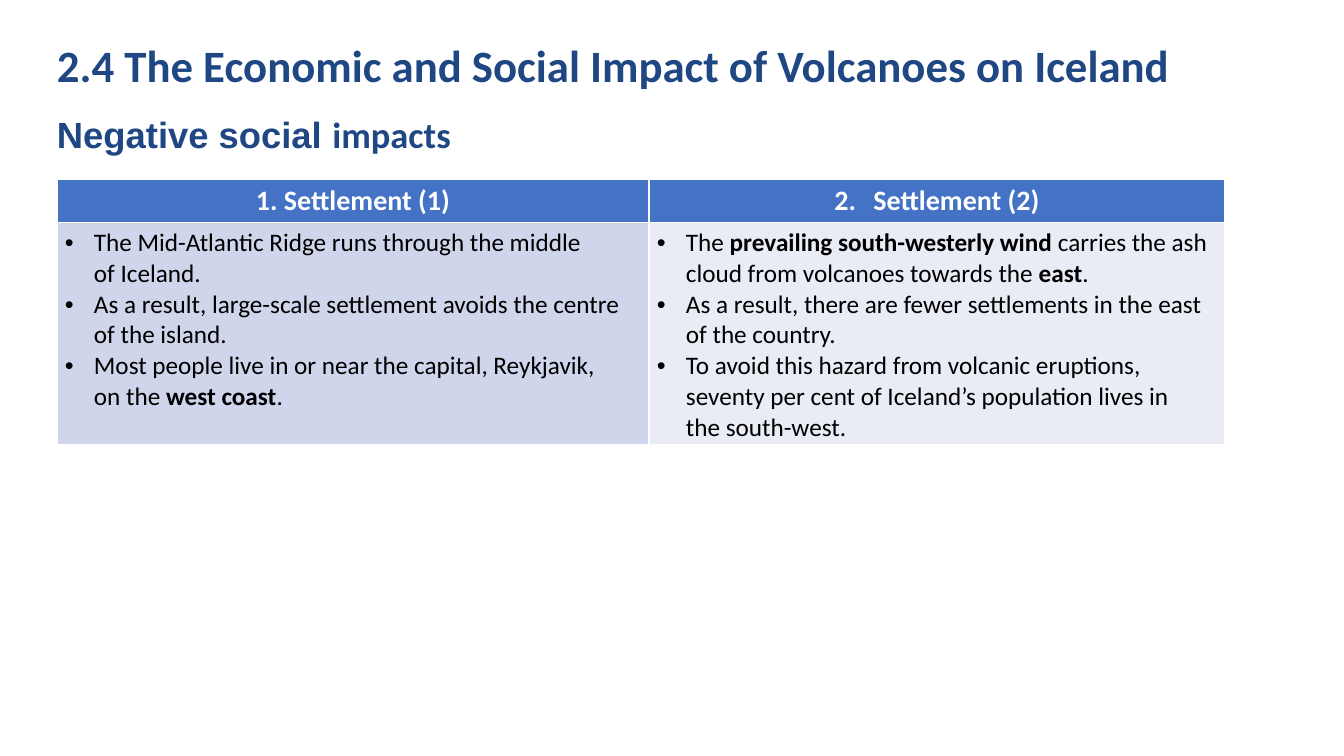
from lxml import etree
from pptx import Presentation
from pptx.dml.color import RGBColor
from pptx.enum.text import MSO_ANCHOR, MSO_AUTO_SIZE, PP_ALIGN
from pptx.oxml.ns import qn
from pptx.util import Emu, Pt

CENTER = PP_ALIGN.CENTER
TOP = MSO_ANCHOR.TOP
GROW = MSO_AUTO_SIZE.SHAPE_TO_FIT_TEXT
PX = 914400 / 100.8
NAVY, WHITE, BLACK, BLUE = "1E4783", "FFFFFF", "000000", "4472C4"


def px(length):
    return Emu(round(length * PX))


def style(font, size, color, bold, name="Calibri"):
    font.size, font.bold, font.name = Pt(size), bold, name
    font.color.rgb = RGBColor.from_string(color)


presentation = Presentation()
presentation.slide_width, presentation.slide_height = px(1344), px(756)
slide = presentation.slides.add_slide(presentation.slide_layouts[6])

# Subtitle
subtitle = slide.shapes.add_textbox(px(47), px(107), px(418), px(54))
subtitle.text_frame.word_wrap = False
subtitle.text_frame.auto_size = GROW
paragraph = subtitle.text_frame.paragraphs[0]
for text, font_name in (("Negative social ", "Arial"), ("impacts", "Calibri")):
    run = paragraph.add_run()
    run.text = text
    style(run.font, 26, NAVY, True, font_name)

# Settlement table: ** switches bold, a newline is a line break
columns = [
    ("1. Settlement (1)", "CFD5EA", [
        "The Mid-Atlantic Ridge runs through the middle\nof Iceland.",
        "As a result, large-scale settlement avoids the centre of the island.",
        "Most people live in or near the capital, Reykjavik,\non the **west coast**.",
    ]),
    ("2.\tSettlement (2)", "E9EBF5", [
        "The **prevailing south-westerly wind **carries the ash cloud from "
        "volcanoes towards the **east**.",
        "As a result, there are fewer settlements in the east of the country.",
        "To avoid this hazard from volcanic eruptions, seventy per cent of "
        "Iceland’s population lives in\nthe south-west.",
    ]),
]
table = slide.shapes.add_table(2, 2, px(57), px(179), px(1168), px(264)).table
table.columns[0].width, table.columns[1].width = px(592), px(576)
table.rows[0].height, table.rows[1].height = px(43), px(221)

for column, (heading, body_fill, bullets) in enumerate(columns):
    header, body = table.cell(0, column), table.cell(1, column)
    for cell, fill in ((header, BLUE), (body, body_fill)):
        cell.margin_left = cell.margin_right = px(8)
        cell.margin_top = cell.margin_bottom = px(5)
        properties = cell._tc.get_or_add_tcPr()
        for side in ("lnL", "lnR", "lnT", "lnB"):
            line = etree.SubElement(properties, qn(f"a:{side}"), w=str(Pt(1)))
            line_fill = etree.SubElement(line, qn("a:solidFill"))
            etree.SubElement(line_fill, qn("a:srgbClr"), val=WHITE)
        cell.fill.solid()
        cell.fill.fore_color.rgb = RGBColor.from_string(fill)

    # Heading, with a hanging number where a tab follows it
    header.text_frame.text = heading
    paragraph = header.text_frame.paragraphs[0]
    paragraph.alignment = CENTER
    if "\t" in heading:
        paragraph._p.get_or_add_pPr().set("marL", str(px(39)))
        paragraph._p.get_or_add_pPr().set("indent", str(-px(39)))
    style(paragraph.runs[0].font, 20, WHITE, True)

    # Bulleted impacts
    for index, bullet in enumerate(bullets):
        frame = body.text_frame
        paragraph = frame.add_paragraph() if index else frame.paragraphs[0]
        properties = paragraph._p.get_or_add_pPr()
        properties.set("marL", str(px(29)))
        properties.set("indent", str(-px(29)))
        etree.SubElement(properties, qn("a:buFont"), typeface="Arial")
        etree.SubElement(properties, qn("a:buChar"), char="•")
        for line_index, line_text in enumerate(bullet.split("\n")):
            if line_index:
                paragraph.add_line_break()
            for part, text in enumerate(line_text.split("**")):
                run = paragraph.add_run()
                run.text = text
                style(run.font, 18, BLACK, part % 2 == 1)

# Title
title = slide.shapes.add_textbox(px(47), px(39), px(1217), px(50))
title.text_frame.word_wrap = True
title.text_frame.vertical_anchor = TOP
title.text_frame.text = "2.4 The Economic and Social Impact of Volcanoes on Iceland"
paragraph = title.text_frame.paragraphs[0]
paragraph.line_spacing = 0.9
style(paragraph.runs[0].font, 32, NAVY, True)

presentation.save("out.pptx")
